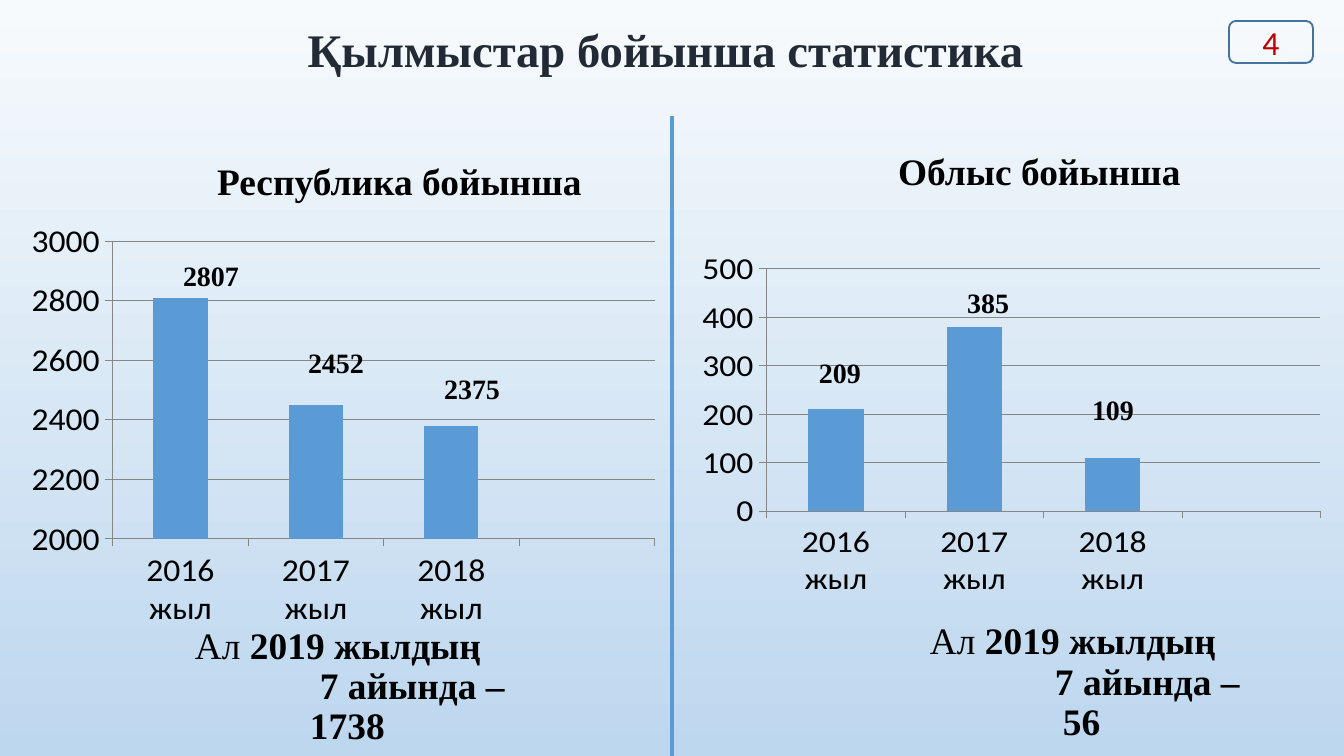
from lxml.etree import SubElement
from pptx import Presentation
from pptx.chart.data import CategoryChartData
from pptx.dml.color import RGBColor
from pptx.enum.chart import XL_CHART_TYPE, XL_TICK_MARK
from pptx.enum.shapes import MSO_CONNECTOR, MSO_SHAPE
from pptx.enum.text import MSO_ANCHOR, PP_ALIGN
from pptx.oxml import parse_xml
from pptx.oxml.ns import nsdecls, qn
from pptx.util import Emu, Pt

BLACK = RGBColor(0x00, 0x00, 0x00)
NAVY = RGBColor(0x22, 0x2A, 0x35)
RED = RGBColor(0xC0, 0x00, 0x00)
BLUE = RGBColor(0x5B, 0x9B, 0xD5)
OUTLINE = RGBColor(0x43, 0x73, 0x9E)
GRAY = RGBColor(0x86, 0x86, 0x86)
SKY_TOP = RGBColor(0xF7, 0xFA, 0xFD)
SKY_BOTTOM = RGBColor(0xBD, 0xD7, 0xEE)
SERIF = "Times New Roman"
SANS = "Calibri"
YEARS = ["2016 жыл", "2017 жыл", "2018 жыл", ""]
PLOT_LAYOUT = (0.13, 0.06, 0.86, 0.77)


def px(length):
    return Emu(round(length * 914400 / 134.4))


def add_span(para, text, size=20, bold=True, color=BLACK, font=SERIF):
    span = para.add_run()
    span.text = text
    span.font.size = Pt(size)
    span.font.bold = bold
    span.font.name = font
    span.font.color.rgb = color


class StatisticsSlide:
    """Slide of yearly crime figures with its drawing style."""

    def __init__(self, deck):
        self.page = deck.slides.add_slide(deck.slide_layouts[6])
        fill = self.page.background.fill
        fill.gradient()
        fill.gradient_angle = 270
        for stop, color in zip(fill.gradient_stops, (SKY_TOP, SKY_BOTTOM)):
            stop.color.rgb = color

    def prepare(self, box):
        frame = box.text_frame
        frame.word_wrap = True
        frame.vertical_anchor = MSO_ANCHOR.MIDDLE
        frame.margin_left = frame.margin_right = 0
        frame.margin_top = frame.margin_bottom = 0
        return frame

    def text(self, place, text, spacing=0.9, **style):
        frame = self.prepare(self.page.shapes.add_textbox(*map(px, place)))
        para = frame.paragraphs[0]
        para.alignment = PP_ALIGN.CENTER
        para.line_spacing = spacing
        add_span(para, text, **style)

    def note(self, place, lines):
        frame = self.prepare(self.page.shapes.add_textbox(*map(px, place)))
        for index, (indent, spans) in enumerate(lines):
            para = frame.add_paragraph() if index else frame.paragraphs[0]
            para.line_spacing = 0.9
            para._p.get_or_add_pPr().set("marL", str(px(indent)))
            for text, bold in spans:
                add_span(para, text, bold=bold)

    def badge(self, place, text):
        box = self.page.shapes.add_shape(MSO_SHAPE.ROUNDED_RECTANGLE, *map(px, place))
        box.shadow.inherit = False
        box.fill.background()
        box.line.color.rgb = OUTLINE
        box.line.width = Pt(1)
        para = self.prepare(box).paragraphs[0]
        para.alignment = PP_ALIGN.CENTER
        add_span(para, text, size=18, bold=False, color=RED, font=SANS)

    def divider(self, x, top, bottom):
        line = self.page.shapes.add_connector(
            MSO_CONNECTOR.STRAIGHT, px(x), px(top), px(x), px(bottom))
        line.line.color.rgb = BLUE
        line.line.width = Pt(2)
        SubElement(line._element.spPr, qn("a:effectLst"))

    def chart(self, place, values, scale):
        data = CategoryChartData()
        data.categories = YEARS
        data.add_series("Series 1", values + [None])
        chart = self.page.shapes.add_chart(
            XL_CHART_TYPE.COLUMN_CLUSTERED, *map(px, place), data).chart
        chart.has_legend = chart.has_title = False
        chart.font.size = Pt(18)
        chart.font.name = SANS
        chart.font.color.rgb = BLACK
        plot = chart.plots[0]
        plot.gap_width = 150
        plot.vary_by_categories = False
        plot.series[0].format.fill.solid()
        plot.series[0].format.fill.fore_color.rgb = BLUE
        axis = chart.value_axis
        axis.minimum_scale, axis.maximum_scale, axis.major_unit = scale
        axis.has_major_gridlines = True
        for each in (axis, chart.category_axis):
            each.major_tick_mark = XL_TICK_MARK.OUTSIDE
        for part in (axis, chart.category_axis, axis.major_gridlines):
            part.format.line.color.rgb = GRAY
            part.format.line.width = Pt(0.5)
        self.place_plot(chart)

    def place_plot(self, chart):
        area = chart._chartSpace.chart.plotArea
        for old in area.findall(qn("c:layout")):
            area.remove(old)
        modes = '<c:layoutTarget val="inner"/><c:xMode val="edge"/><c:yMode val="edge"/>'
        sizes = "".join(f'<c:{key} val="{size}"/>' for key, size in zip("xywh", PLOT_LAYOUT))
        area.insert(0, parse_xml(
            f'<c:layout {nsdecls("c")}><c:manualLayout>{modes}{sizes}'
            "</c:manualLayout></c:layout>"))


def main():
    deck = Presentation()
    deck.slide_width, deck.slide_height = px(1344), px(756)
    slide = StatisticsSlide(deck)
    slide.text((230, 10, 871, 84), "Қылмыстар бойынша статистика", size=25, color=NAVY)
    slide.badge((1229, 21, 84, 42), "4")
    panels = [
        ("Республика бойынша", (137, 105, 525, 157), (31, 218, 630, 410),
         (2000, 3000, 200), [2810, 2450, 2380],
         [("2807", 211, 275), ("2452", 336, 362), ("2375", 472, 388)],
         (179, 609, 347, 157), "1738", 131),
        ("Облыс бойынша", (777, 95, 525, 157), (683, 250, 644, 347),
         (0, 500, 100), [210, 380, 110],
         [("209", 840, 372), ("385", 988, 302), ("109", 1113, 409)],
         (914, 610, 347, 146), "56", 149),
    ]
    for title, title_place, place, scale, values, labels, note_place, total, indent in panels:
        slide.chart(place, values, scale)
        for label, x, y in labels:
            slide.text((x - 74, y - 18, 148, 36), label, spacing=1.0, size=15)
        slide.text(title_place, title)
        slide.note(note_place, [
            (16, [("Ал ", False), ("2019 жылдың", True)]),
            (141, [("7 айында –", True)]),
            (indent, [(total, True)]),
        ])
    slide.divider(672, 116, 756)
    deck.save("out.pptx")


if __name__ == "__main__":
    main()
